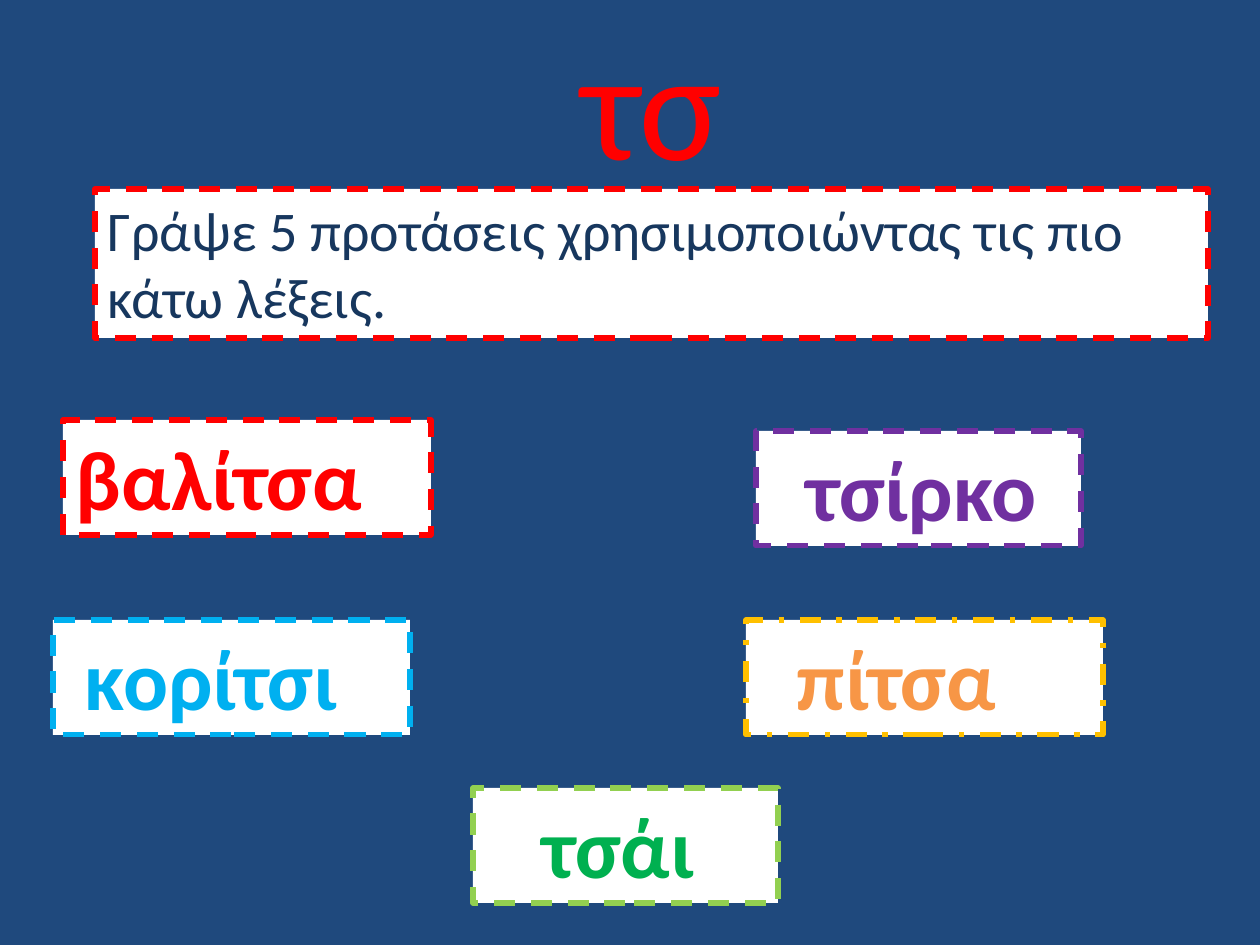
from pptx import Presentation
from pptx import util as u
from pptx.dml.color import RGBColor
from pptx.enum import dml, shapes, text

PX = 914400 / 126
SPACE = 19
COLORS = {
    "navy": "1F497D", "ink": "17375E", "white": "FFFFFF", "red": "FF0000",
    "purple": "7030A0", "blue": "00B0F0", "amber": "FFC000", "orange": "F79646",
    "lime": "92D050", "green": "00B050",
}
DASH = dml.MSO_LINE.DASH
DASH_DOT = dml.MSO_LINE.DASH_DOT


def px(length):
    """Turn px into EMU."""
    return u.Emu(round(length * PX))


def color(name):
    """Look up a named colour."""
    return RGBColor.from_string(COLORS[name])


def write(shape, words, size, ink, bold=False, align=text.PP_ALIGN.LEFT, indent=0):
    """Write one formatted paragraph into a shape."""
    frame = shape.text_frame
    frame.word_wrap = True
    frame.vertical_anchor = text.MSO_ANCHOR.TOP
    frame.margin_left = px(13 + indent)
    paragraph = frame.paragraphs[0]
    paragraph.alignment = align
    run = paragraph.add_run()
    run.text = words
    run.font.name = "Calibri"
    run.font.size = u.Pt(size)
    run.font.bold = bold
    run.font.color.rgb = color(ink)


def dashed_card(slide, box, border, dash=DASH):
    """Draw a white card with a broken border."""
    card = slide.shapes.add_shape(shapes.MSO_SHAPE.RECTANGLE, *map(px, box))
    card.shadow.inherit = False
    card.fill.solid()
    card.fill.fore_color.rgb = color("white")
    card.line.color.rgb = color(border)
    card.line.width = u.Pt(3)
    card.line.dash_style = dash
    return card


def heading(slide, box):
    """Place the letter pair at the top."""
    letters = slide.shapes.add_textbox(*map(px, box))
    write(letters, "τσ", 88, "red", align=text.PP_ALIGN.CENTER)


def instruction(slide, box):
    """Place the task."""
    task = dashed_card(slide, box, "red")
    write(task, "Γράψε 5 προτάσεις χρησιμοποιώντας τις πιο κάτω λέξεις.", 32, "ink")


def word_cards(slide, box):
    """Place the word cards relative to the box."""
    left, top, _, height = box
    words = [
        ("κορίτσι", 0, 200, 357, "blue", "blue", DASH, 1),
        ("πίτσα", 693, 200, 357, "amber", "orange", DASH_DOT, 2),
        ("βαλίτσα", 10, 0, 368, "red", "red", DASH, 0),
        ("τσίρκο", 703, 11, 325, "purple", "purple", DASH, 2),
        ("τσάι", 420, 368, 305, "lime", "green", DASH, 3),
    ]
    for word, x, y, width, border, ink, dash, spaces in words:
        card = dashed_card(slide, (left + x, top + y, width, height), border, dash)
        write(card, word, 48, ink, bold=True, indent=spaces * SPACE)


def main():
    """Build and save the slide."""
    deck = Presentation()
    deck.slide_width, deck.slide_height = px(1260), px(945)
    slide = deck.slides.add_slide(deck.slide_layouts[6])
    slide.background.fill.solid()
    slide.background.fill.fore_color.rgb = color("navy")
    heading(slide, (567, 0, 168, 199))
    instruction(slide, (95, 189, 1113, 149))
    word_cards(slide, (53, 420, 1050, 115))
    deck.save("out.pptx")


if __name__ == "__main__":
    main()
